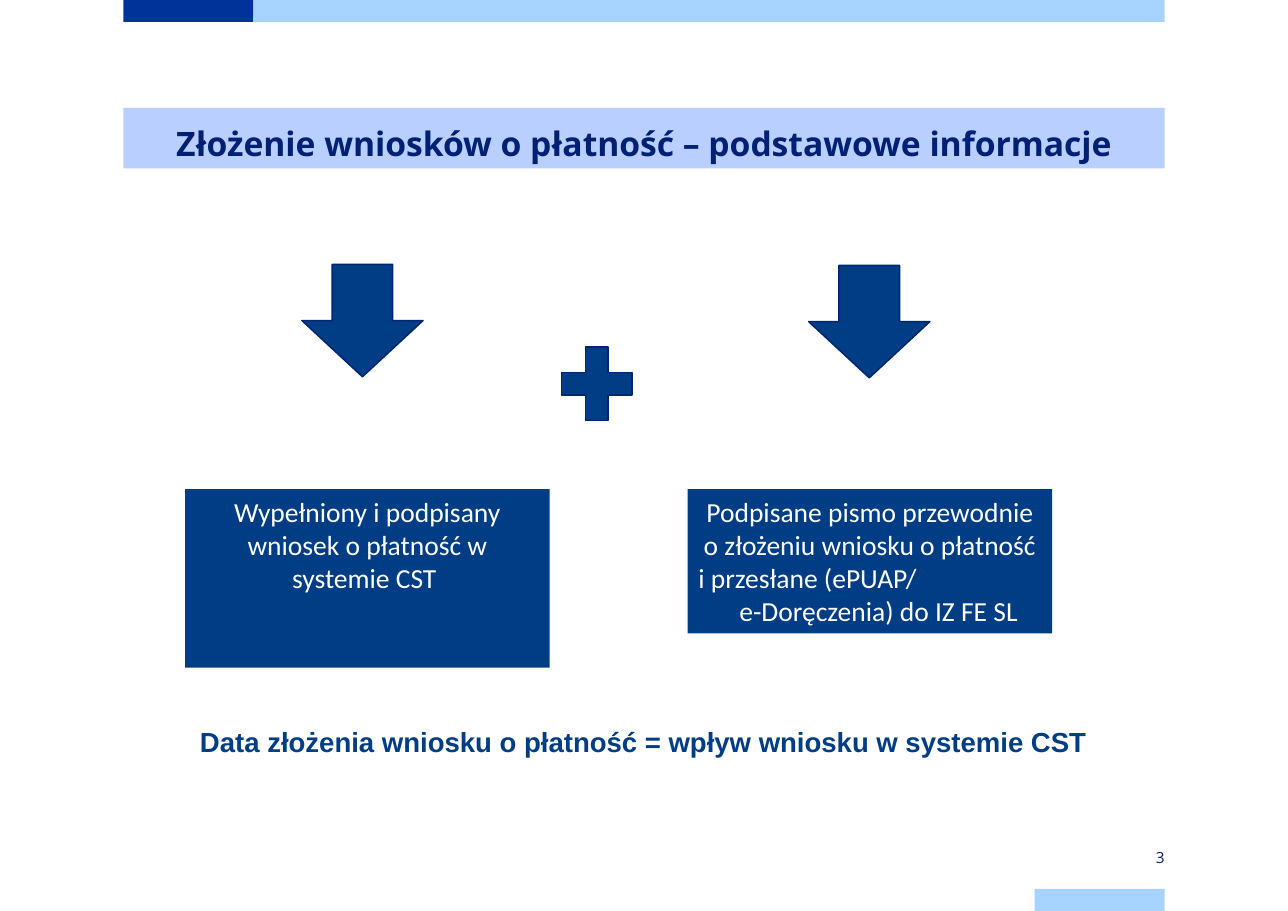
from pptx import Presentation
from pptx import util as u
from pptx.dml.color import RGBColor
from pptx.enum import shapes, text

NAVY, BLUE, SKY, WHITE = "002073", "003D84", "A6D3FF", "FFFFFF"
CENTER, LEFT, RIGHT = text.PP_ALIGN.CENTER, text.PP_ALIGN.LEFT, text.PP_ALIGN.RIGHT
SHAPE = shapes.MSO_SHAPE


def rgb(value):
    return RGBColor.from_string(value)


def inches(*lengths):
    return [u.Inches(length) for length in lengths]


class SlideBuilder:
    """Holds the slide and the shared style of its elements."""

    def __init__(self, slide):
        self.slide = slide

    def frame(self, element, margins=(0.1, 0.05, 0.1, 0.05), anchor=text.MSO_ANCHOR.TOP):
        frame = element.text_frame
        frame.word_wrap = True
        frame.auto_size = text.MSO_AUTO_SIZE.NONE
        frame.vertical_anchor = anchor
        (frame.margin_left, frame.margin_top,
         frame.margin_right, frame.margin_bottom) = inches(*margins)
        return frame

    def fill_paragraph(self, paragraph, words, font, size, color, bold=False, align=CENTER):
        paragraph.text = words
        paragraph.alignment = align
        paragraph.font.name = font
        paragraph.font.size = u.Pt(size)
        paragraph.font.bold = bold
        paragraph.font.color.rgb = rgb(color)

    def title(self, words, box, fill):
        heading = self.slide.shapes.title
        heading.left, heading.top, heading.width, heading.height = inches(*box)
        heading.fill.solid()
        heading.fill.fore_color.rgb = rgb(fill)
        paragraph = self.frame(heading, (0, 0, 0, 0)).paragraphs[0]
        paragraph.line_spacing = u.Pt(36)
        self.fill_paragraph(paragraph, words, "Open Sans", 22, NAVY, True)

    def shape(self, kind, box, fill, line=None):
        element = self.slide.shapes.add_shape(kind, *inches(*box))
        element.shadow.inherit = False
        element.fill.solid()
        element.fill.fore_color.rgb = rgb(fill)
        if line:
            element.line.color.rgb = rgb(line)
            element.line.width = u.Pt(1)
        else:
            element.line.fill.background()
        return element

    def card(self, box, lines):
        """Add a filled box; each line is (words, alignment, left indent)."""
        frame = self.frame(self.shape(SHAPE.RECTANGLE, box, BLUE))
        for index, (words, align, indent) in enumerate(lines):
            paragraph = frame.add_paragraph() if index else frame.paragraphs[0]
            self.fill_paragraph(paragraph, words, "Calibri", 18, WHITE, align=align)
            if indent:
                paragraph._p.get_or_add_pPr().set("marL", str(u.Inches(indent)))

    def label(self, words, box, font, size, color, bold=False, align=CENTER, **layout):
        element = self.slide.shapes.add_textbox(*inches(*box))
        paragraph = self.frame(element, **layout).paragraphs[0]
        self.fill_paragraph(paragraph, words, font, size, color, bold, align)


def main():
    deck = Presentation()
    deck.slide_width, deck.slide_height = inches(11.69, 8.27)
    page = SlideBuilder(deck.slides.add_slide(deck.slide_layouts[5]))

    for box, color in (((1.12, 0, 1.18, 0.2), "003399"),
                       ((2.3, 0, 8.27, 0.2), SKY),
                       ((9.39, 8.07, 1.18, 0.2), SKY)):
        page.shape(SHAPE.RECTANGLE, box, color)

    page.title("Złożenie wniosków o płatność – podstawowe informacje",
               (1.12, 0.98, 9.45, 0.55), "B8CFFF")

    for kind, box in ((SHAPE.DOWN_ARROW, (2.74, 2.4, 1.1, 1.02)),
                      (SHAPE.DOWN_ARROW, (7.34, 2.41, 1.1, 1.02)),
                      (SHAPE.MATH_PLUS, (4.98, 3.03, 0.87, 0.91))):
        page.shape(kind, box, BLUE, "002671")

    page.card((1.68, 4.44, 3.31, 1.62),
              [("Wypełniony i podpisany wniosek o płatność w systemie CST ", CENTER, 0)])
    page.card((6.24, 4.44, 3.31, 1.31),
              [("Podpisane pismo przewodnie o złożeniu wniosku o płatność", CENTER, 0),
               ("i przesłane (ePUAP/", LEFT, 0),
               ("e-Doręczenia) do IZ FE SL", CENTER, 0.16)])

    page.label("Data złożenia wniosku o płatność = wpływ wniosku w systemie CST",
               (1.6, 6.53, 8.48, 0.4), "Arial", 18, BLUE, True)
    page.label("3", (9.39, 7.68, 1.18, 0.2), "Open Sans", 10, NAVY, align=RIGHT,
               margins=(0, 0.08, 0, 0.08), anchor=text.MSO_ANCHOR.MIDDLE)

    deck.save("out.pptx")


if __name__ == "__main__":
    main()
